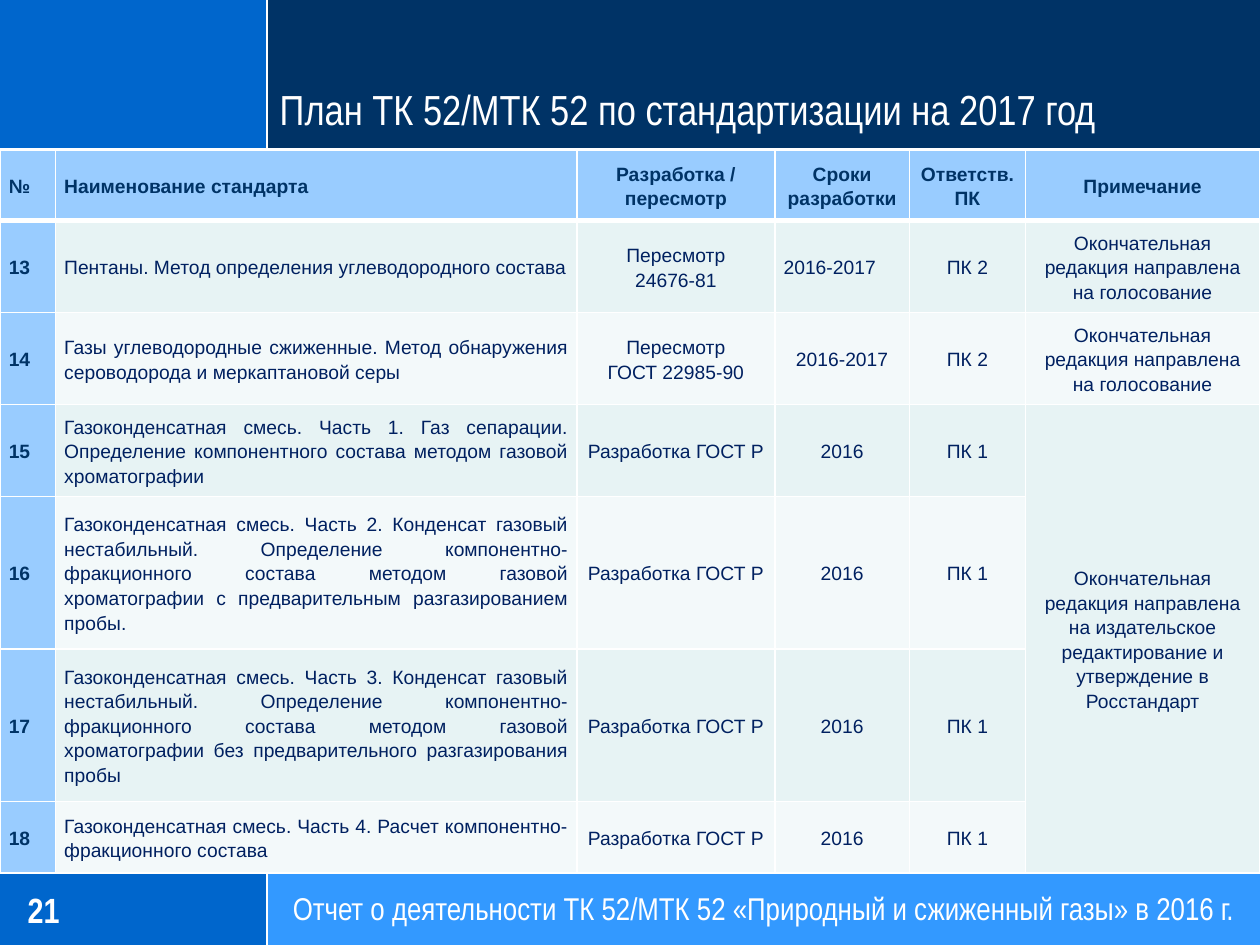
from dataclasses import dataclass
from typing import NamedTuple

from lxml.etree import SubElement
from pptx import Presentation
from pptx.dml.color import RGBColor
from pptx.enum.shapes import MSO_CONNECTOR, MSO_SHAPE
from pptx.enum.text import MSO_ANCHOR, MSO_AUTO_SIZE, PP_ALIGN
from pptx.oxml.ns import qn
from pptx.util import Inches, Pt


@dataclass(frozen=True)
class Theme:
    white: str = "FFFFFF"
    blue: str = "0066CC"
    sky: str = "3399FF"
    navy: str = "003366"
    label: str = "99CCFF"
    body_text: str = "002060"
    stripes: tuple[str, str] = ("E7F3F4", "F3F9FA")
    heading_font: str = "Arial Narrow"
    table_font: str = "Arial"
    title_size: float = 24
    number_size: float = 20
    footer_size: float = 18
    table_size: float = 11
    rule_width: float = 1.25
    border_width: float = 1
    header_border_width: float = 3


class Area(NamedTuple):
    column: float
    row: float
    columns: float
    rows: float


class Band(NamedTuple):
    area: Area
    color: str


class Rule(NamedTuple):
    start: tuple[float, float]
    end: tuple[float, float]


class TextStyle(NamedTuple):
    font: str
    size: float
    color: str
    bold: bool = False
    alignment: PP_ALIGN = PP_ALIGN.LEFT
    line_spacing: float = 1.0


class Standard(NamedTuple):
    number: str
    name: str
    work: str
    period: str
    committee: str
    note: str = ""
    name_alignment: PP_ALIGN = PP_ALIGN.JUSTIFY
    period_alignment: PP_ALIGN = PP_ALIGN.CENTER


THEME = Theme()
GRID_UNIT = 0.1
COLUMNS, ROWS = 100, 75
SPLIT = 21.2
HEADER_END = 11.8
FOOTER_START = 69.1
FOOTER_ROWS = ROWS - FOOTER_START

BANDS = [
    Band(Area(0, FOOTER_START, SPLIT, FOOTER_ROWS), THEME.blue),
    Band(Area(SPLIT, FOOTER_START, COLUMNS - SPLIT, FOOTER_ROWS), THEME.sky),
    Band(Area(0, 0, SPLIT, HEADER_END), THEME.blue),
    Band(Area(SPLIT, 0, COLUMNS - SPLIT, HEADER_END), THEME.navy),
]
RULES = [
    Rule((SPLIT, FOOTER_START), (SPLIT, ROWS)),
    Rule((SPLIT, 0), (SPLIT, HEADER_END)),
    Rule((0, FOOTER_START), (COLUMNS, FOOTER_START)),
    Rule((0, HEADER_END), (COLUMNS, HEADER_END)),
]

TABLE_COLUMNS = [4.4, 41.4, 15.7, 10.7, 9.2, 18.6]
TABLE_ROWS = [5.6, 7.3, 7.3, 7.3, 12.1, 12.1, 5.7]
HEADINGS = ["№", "Наименование стандарта", "Разработка / пересмотр",
            "Сроки разработки", "Ответств. ПК", "Примечание"]
NEW_STANDARD = "Разработка ГОСТ Р"
VOTING = "Окончательная редакция направлена на голосование"
PUBLISHING = ("Окончательная редакция направлена на издательское "
              "редактирование и утверждение в Росстандарт")
MIXTURE = "Газоконденсатная смесь. Часть"
UNSTABLE = ("Конденсат газовый нестабильный. Определение компонентно-фракционного "
            "состава методом газовой хроматографии")
STANDARDS = [
    Standard("13", "Пентаны. Метод определения углеводородного состава",
             "Пересмотр\n24676-81", "2016-2017", "ПК 2", VOTING,
             PP_ALIGN.LEFT, PP_ALIGN.LEFT),
    Standard("14", "Газы углеводородные сжиженные. Метод обнаружения "
             "сероводорода и меркаптановой серы",
             "Пересмотр\nГОСТ 22985-90", "2016-2017", "ПК 2", VOTING),
    Standard("15", f"{MIXTURE} 1. Газ сепарации. Определение компонентного "
             "состава методом газовой хроматографии",
             NEW_STANDARD, "2016", "ПК 1", PUBLISHING),
    Standard("16", f"{MIXTURE} 2. {UNSTABLE} с предварительным разгазированием пробы.",
             NEW_STANDARD, "2016", "ПК 1"),
    Standard("17", f"{MIXTURE} 3. {UNSTABLE} без предварительного разгазирования пробы",
             NEW_STANDARD, "2016", "ПК 1"),
    Standard("18", f"{MIXTURE} 4. Расчет компонентно-фракционного состава",
             NEW_STANDARD, "2016", "ПК 1"),
]


def grid(units: float) -> int:
    return Inches(units * GRID_UNIT)


def color_of(value: str) -> RGBColor:
    return RGBColor.from_string(value)


def format_text(text_frame, style: TextStyle) -> None:
    for paragraph in text_frame.paragraphs:
        paragraph.alignment = style.alignment
        paragraph.line_spacing = style.line_spacing
        for run in paragraph.runs:
            run.font.name = style.font
            run.font.size = Pt(style.size)
            run.font.bold = style.bold
            run.font.color.rgb = color_of(style.color)


def draw_band(slide, band: Band) -> None:
    shape = slide.shapes.add_shape(MSO_SHAPE.RECTANGLE, *map(grid, band.area))
    shape.shadow.inherit = False
    shape.fill.solid()
    shape.fill.fore_color.rgb = color_of(band.color)
    shape.line.fill.background()


def draw_rule(slide, rule: Rule) -> None:
    connector = slide.shapes.add_connector(
        MSO_CONNECTOR.STRAIGHT, *map(grid, rule.start + rule.end))
    connector.line.color.rgb = color_of(THEME.white)
    connector.line.width = Pt(THEME.rule_width)
    SubElement(connector._element.spPr, qn("a:effectLst"))


def fill_text(shape, area: Area, text: str, style: TextStyle, anchor: MSO_ANCHOR) -> None:
    shape.left, shape.top, shape.width, shape.height = map(grid, area)
    text_frame = shape.text_frame
    text_frame.text = text
    text_frame.word_wrap = True
    text_frame.auto_size = MSO_AUTO_SIZE.NONE
    text_frame.vertical_anchor = anchor
    text_frame.margin_left = text_frame.margin_right = 0
    text_frame.margin_top = text_frame.margin_bottom = 0
    format_text(text_frame, style)


def draw_border(cell, side: str, width: float) -> None:
    line = SubElement(cell._tc.get_or_add_tcPr(), qn(f"a:{side}"), w=str(Pt(width)))
    fill = SubElement(line, qn("a:solidFill"))
    SubElement(fill, qn("a:srgbClr"), val=THEME.white)


def fill_cell(cell, row: int, text: str, fill: str, bold: bool, alignment: PP_ALIGN) -> None:
    cell.text = text
    cell.vertical_anchor = MSO_ANCHOR.MIDDLE
    cell.margin_left = cell.margin_right = Inches(0.07)
    cell.margin_top = cell.margin_bottom = 0
    thick_sides = {0: "lnB", 1: "lnT"}
    for side in ("lnL", "lnR", "lnT", "lnB"):
        is_thick = thick_sides.get(row) == side
        draw_border(cell, side, THEME.header_border_width if is_thick else THEME.border_width)
    cell.fill.solid()
    cell.fill.fore_color.rgb = color_of(fill)
    color = THEME.navy if bold else THEME.body_text
    format_text(cell.text_frame, TextStyle(
        THEME.table_font, THEME.table_size, color, bold, alignment, 1.15))


def draw_table(slide) -> None:
    area = Area(0, 11.9, sum(TABLE_COLUMNS), sum(TABLE_ROWS))
    table = slide.shapes.add_table(
        len(TABLE_ROWS), len(TABLE_COLUMNS), *map(grid, area)).table
    table.horz_banding = False
    for column, width in zip(table.columns, TABLE_COLUMNS):
        column.width = grid(width)
    for row, height in zip(table.rows, TABLE_ROWS):
        row.height = grid(height)
    for index, heading in enumerate(HEADINGS):
        alignment = PP_ALIGN.LEFT if index < 2 else PP_ALIGN.CENTER
        fill_cell(table.cell(0, index), 0, heading, THEME.label, True, alignment)
    for row, standard in enumerate(STANDARDS, start=1):
        stripe = THEME.stripes[(row - 1) % 2]
        alignments = [PP_ALIGN.LEFT, standard.name_alignment, PP_ALIGN.CENTER,
                      standard.period_alignment, PP_ALIGN.CENTER, PP_ALIGN.CENTER]
        for index, (text, alignment) in enumerate(zip(standard, alignments)):
            fill = THEME.label if index == 0 else stripe
            fill_cell(table.cell(row, index), row, text, fill, index == 0, alignment)
    table.cell(3, 5).merge(table.cell(6, 5))


def main() -> None:
    presentation = Presentation()
    presentation.slide_width, presentation.slide_height = grid(COLUMNS), grid(ROWS)
    slide = presentation.slides.add_slide(presentation.slide_layouts[5])
    for band in BANDS:
        draw_band(slide, band)
    for rule in RULES:
        draw_rule(slide, rule)
    title = slide.shapes.title
    slide.shapes._spTree.append(title._element)
    fill_text(title, Area(22.2, 5.6, 77.7, 5), "План ТК 52/МТК 52 по стандартизации на 2017 год",
              TextStyle(THEME.heading_font, THEME.title_size, THEME.white), MSO_ANCHOR.BOTTOM)
    fill_text(slide.shapes.add_textbox(0, 0, 0, 0), Area(2.2, 69.6, 16.3, 5.2), "21",
              TextStyle(THEME.heading_font, THEME.number_size, THEME.white, True),
              MSO_ANCHOR.MIDDLE)
    fill_text(slide.shapes.add_textbox(0, 0, 0, 0),
              Area(SPLIT, FOOTER_START, COLUMNS - SPLIT, FOOTER_ROWS),
              "Отчет о деятельности ТК 52/МТК 52 «Природный и сжиженный газы» в 2016 г.",
              TextStyle(THEME.heading_font, THEME.footer_size, THEME.white,
                        alignment=PP_ALIGN.CENTER), MSO_ANCHOR.MIDDLE)
    draw_table(slide)
    presentation.save("out.pptx")


if __name__ == "__main__":
    main()
